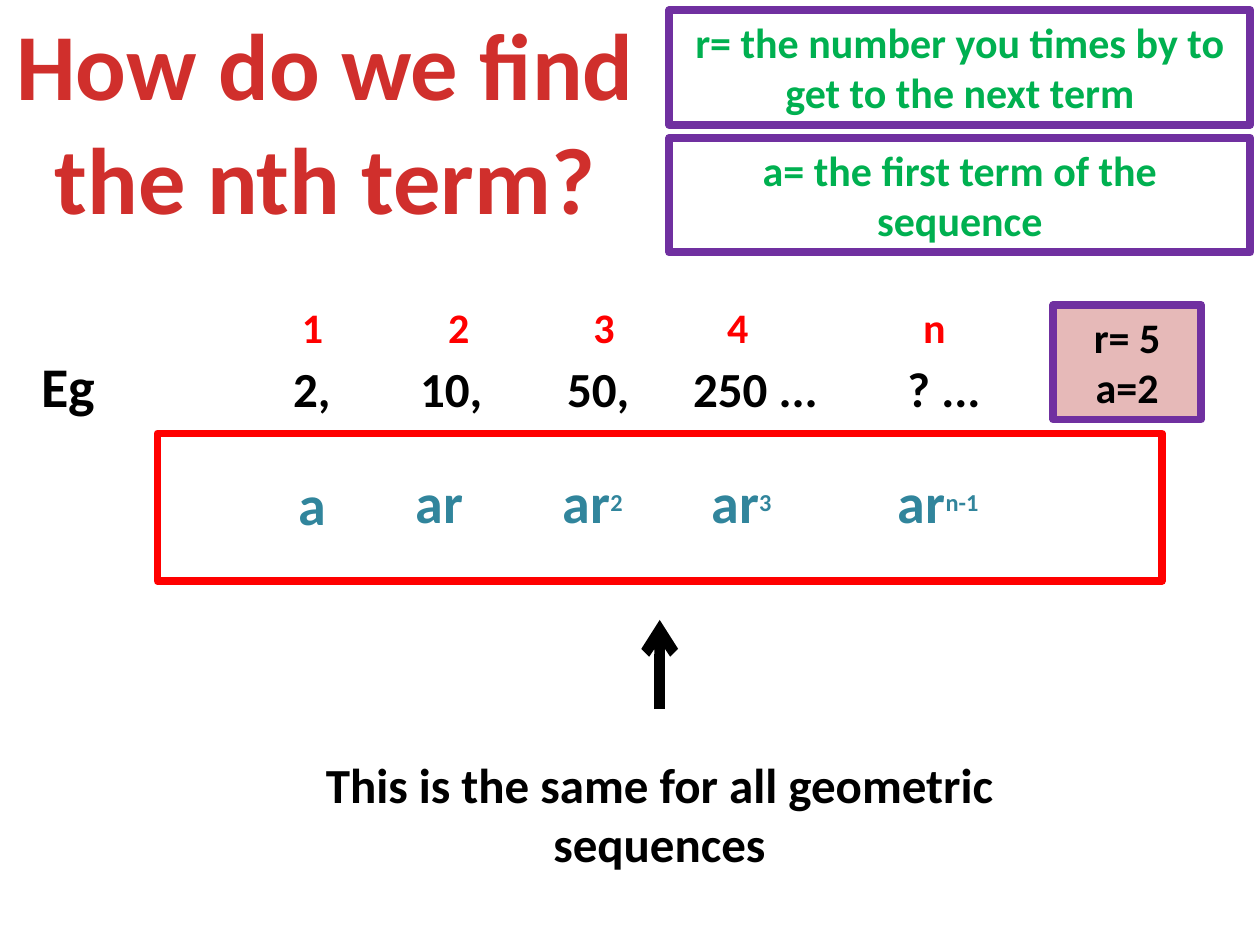
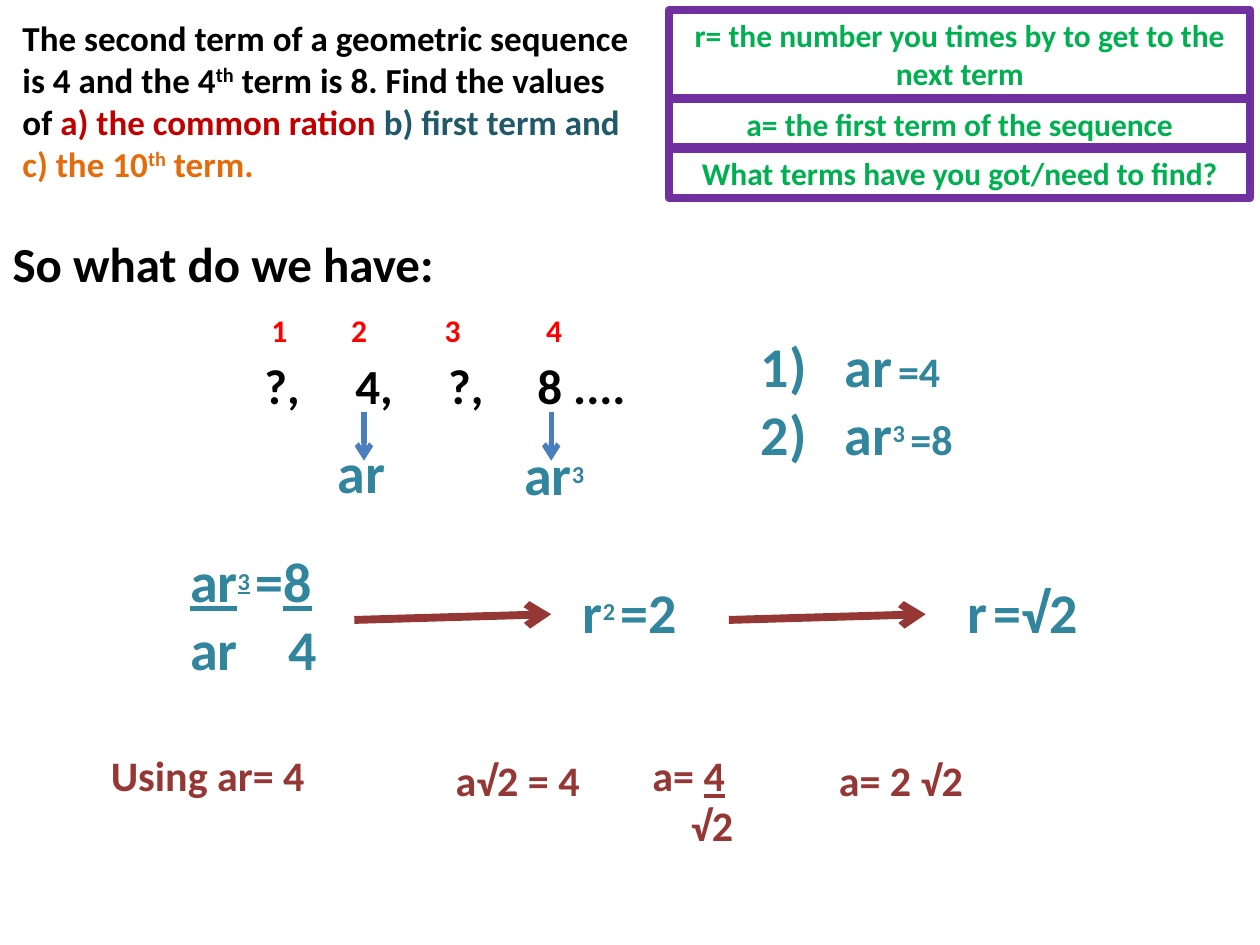
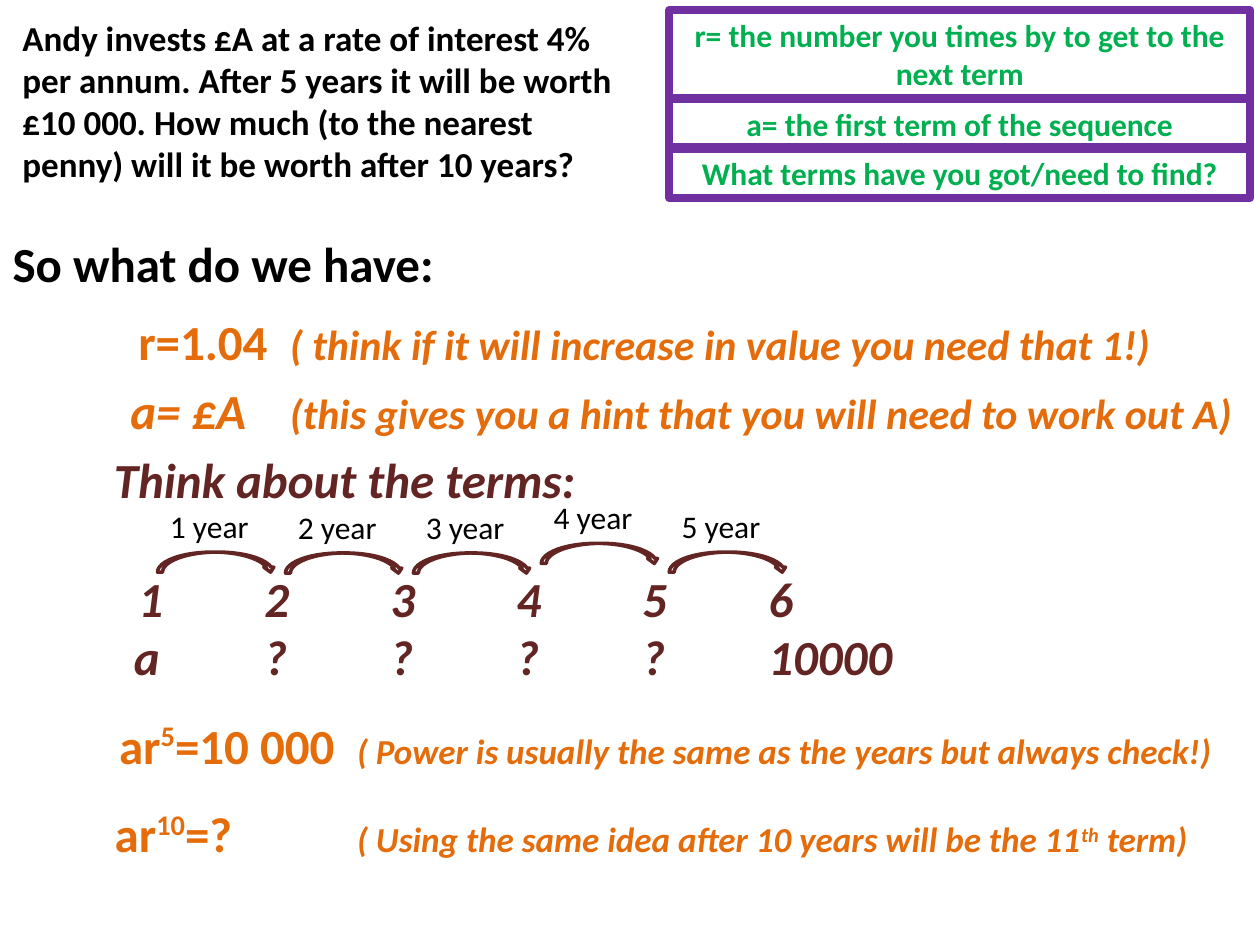
from collections import namedtuple

from lxml.etree import SubElement
from pptx import Presentation
from pptx.dml.color import RGBColor
from pptx.enum.shapes import MSO_CONNECTOR, MSO_SHAPE
from pptx.enum.text import MSO_ANCHOR, MSO_AUTO_SIZE, PP_ALIGN
from pptx.oxml.ns import qn
from pptx.util import Pt

Box = namedtuple("Box", "left top width height")

COLORS = {
    "black": "000000",
    "title": "D02F2C",
    "rule": "00B050",
    "frame": "7030A0",
    "pink": "E6B9B8",
    "red": "FF0000",
    "teal": "31859C",
    "dark_teal": "215968",
    "dark_red": "C00000",
    "orange": "E46C0A",
    "blue": "4B7EBC",
    "brown": "953735",
    "maroon": "632523",
}
FONT = "Calibri"
TITLE_ONLY = 5
LINE_WIDTH = 4.5

RATIO_RULE = "r= the number you times by to get to the next term"
FIRST_TERM_RULE = "a= the first term of the sequence"
TERMS_RULE = "What terms have you got/need to find?"


def rgb(color):
    return RGBColor.from_string(COLORS[color])


def style(font, size=None, color=None, bold=None, italic=None, underline=None):
    if size:
        font.size = Pt(size)
    if color:
        font.color.rgb = rgb(color)
    if bold is not None:
        font.bold = bold
    if italic is not None:
        font.italic = italic
    if underline is not None:
        font.underline = underline


def raised(text, percent=30, **look):
    return text, dict(look, raised=percent)


def write(paragraph, runs, tabs=(), before=0, indent=0, align=PP_ALIGN.LEFT, **look):
    paragraph.alignment = align
    paragraph.space_before = Pt(before)
    properties = paragraph._p.get_or_add_pPr()
    if indent:
        properties.set("marL", str(Pt(indent)))
    if tabs:
        stops = SubElement(properties, qn("a:tabLst"))
        for position in tabs:
            SubElement(stops, qn("a:tab"), pos=str(Pt(position)), algn="l")
    paragraph.font.name = FONT
    style(paragraph.font, **{"bold": True, **look})
    for item in [runs] if isinstance(runs, str) else runs:
        text, change = (item, {}) if isinstance(item, str) else item
        change = dict(change)
        percent = change.pop("raised", None)
        run = paragraph.add_run()
        run.text = text
        style(run.font, **change)
        if percent:
            run._r.get_or_add_rPr().set("baseline", str(percent * 1000))


def prepare(frame):
    frame.word_wrap = True
    frame.auto_size = MSO_AUTO_SIZE.NONE
    frame.vertical_anchor = MSO_ANCHOR.TOP
    return frame


def add_text(slide, box, runs, **look):
    frame = prepare(slide.shapes.add_textbox(*map(Pt, box)).text_frame)
    write(frame.paragraphs[0], runs, **look)
    return frame


def add_outline(slide, box, kind, color, width=LINE_WIDTH, fill=None):
    outline = slide.shapes.add_shape(kind, *map(Pt, box))
    outline.shadow.inherit = False
    outline.line.color.rgb = rgb(color)
    outline.line.width = Pt(width)
    if fill:
        outline.fill.solid()
        outline.fill.fore_color.rgb = rgb(fill)
    else:
        outline.fill.background()
    return outline


def add_framed(slide, box, lines, size, color, fill=None):
    panel = add_outline(slide, box, MSO_SHAPE.RECTANGLE, "frame", fill=fill)
    frame = prepare(panel.text_frame)
    for index, line in enumerate(lines):
        paragraph = frame.add_paragraph() if index else frame.paragraphs[0]
        write(paragraph, line, size=size, color=color, align=PP_ALIGN.CENTER)


def add_arrow(slide, start, end, color, width):
    arrow = slide.shapes.add_connector(MSO_CONNECTOR.STRAIGHT, *map(Pt, start + end))
    arrow.line.color.rgb = rgb(color)
    arrow.line.width = Pt(width)
    SubElement(arrow.line._get_or_add_ln(), qn("a:tailEnd"), type="arrow")
    SubElement(arrow._element.spPr, qn("a:effectLst"))


def add_slide(deck, title, box, **look):
    slide = deck.slides.add_slide(deck.slide_layouts[TITLE_ONLY])
    heading = slide.shapes.title
    heading.left, heading.top, heading.width, heading.height = map(Pt, box)
    write(prepare(heading.text_frame).paragraphs[0], title, **look)
    return slide


def add_rules(slide, box, rules, size):
    for text, top, height in rules:
        add_framed(slide, Box(box.left, box.top + top, box.width, height),
                   [text], size, "rule")


def add_question_slide(deck, question):
    slide = add_slide(deck, "So what do we have:", Box(0, 129.6, 720, 41),
                      size=28, color="black")
    add_rules(slide, Box(382.5, 5.75, 332, 108),
              [(RATIO_RULE, 0, 51), (FIRST_TERM_RULE, 50.5, 29), (TERMS_RULE, 78.5, 29)], 18)
    add_text(slide, Box(5.75, 5.75, 366, 104), question, size=20, color="black")
    return slide


def add_numbered_sequence(slide, box):
    frame = add_text(slide, box, "\t1\t2\t3\t4\tn", tabs=(149, 232.5, 315.5, 392, 504),
                     size=24, color="red")
    write(frame.add_paragraph(),
          [("Eg", {"size": 32}), "\t2,\t10,\t50,\t250 ...\t? ..."],
          tabs=(144, 216.5, 300.5, 372.5, 495), size=28, color="black")


def add_general_terms(slide, box):
    add_outline(slide, box, MSO_SHAPE.RECTANGLE, "red")
    terms = [("a", "", 73.5, 28), ("ar", "", 140.5, 45), ("ar", "2", 224.5, 68),
             ("ar", "3", 309.5, 68), ("ar", "n-1", 416, 68)]
    for base, power, left, width in terms:
        top = 16 if power or base == "ar" else 17
        runs = [base, raised(power, size=24)] if power else base
        add_text(slide, Box(box.left + left, box.top + top, width, 46), runs,
                 size=32, color="teal")
    middle = box.left + box.width / 2
    add_arrow(slide, (middle, box.top + 157.5), (middle, box.top + 106.5), "black", 6)


def add_known_terms(slide, box):
    frame = add_text(slide, box, "\t1\t2\t3\t4", tabs=(148, 193.5, 247, 305),
                     size=18, color="red")
    write(frame.add_paragraph(), "\t?,\t4,\t?,\t8 ....", tabs=(144, 196, 249, 300),
          before=4, size=28, color="black")
    terms = [(["ar"], 186, 72, 208), (["ar", raised("3", size=24)], 292.5, 73.5, 315)]
    for runs, left, top, arrow in terms:
        add_text(slide, Box(box.left + left, box.top + top, 68, 46), runs,
                 size=32, color="teal")
        add_arrow(slide, (box.left + arrow, box.top + 61), (box.left + arrow, box.top + 89),
                  "blue", 3)


def add_equations(slide, box):
    equations = [("1)\tar", " ", "=4"), ("2)\tar", "3 ", "=8")]
    for index, (base, power, value) in enumerate(equations):
        add_text(slide, Box(box.left, box.top + 39 * index, box.width, 46),
                 [base, raised(power, size=24), (value, {"size": 24})],
                 tabs=(48,), size=32, color="teal")


def add_division(slide, box):
    under = {"underline": True}
    frame = add_text(slide, Box(box.left, box.top, 107, 85),
                     [("ar", under), raised("3", size=24, **under), raised(" ", size=24),
                      "=", ("8", under)],
                     size=32, color="teal")
    write(frame.add_paragraph(), "ar\t4", tabs=(56,), size=32, color="teal")
    for left, power, value in [(224.5, "2 ", "=2"), (444.5, " ", "=√2")]:
        add_text(slide, Box(box.left + left, box.top + 17.25, 107, 46),
                 ["r", raised(power, size=24), value], size=32, color="teal")
    for left in (101, 315):
        add_arrow(slide, (box.left + left, box.top + 45.25),
                  (box.left + left + 112.5, box.top + 42), "brown", LINE_WIDTH)


def add_first_term_working(slide, box):
    look = {"size": 24, "color": "brown"}
    add_text(slide, Box(box.left, box.top, 190, 36), "Using ar= 4", **look)
    add_text(slide, Box(box.left + 197, box.top + 3, 112, 36), "a√2 = 4", **look)
    frame = add_text(slide, Box(box.left + 309.5, box.top, 100, 87),
                     ["a= ", ("4", {"underline": True})], **look)
    write(frame.add_paragraph(), "√2", indent=22, **look)
    add_text(slide, Box(box.left + 416, box.top + 3, 191, 36), "a= 2 √2", **look)


def add_investment_facts(slide, box):
    hint = {"size": 24, "italic": True}
    facts = [("\tr=1.04", "\t( think if it will increase in value you need that 1!)", 72, False),
             ("\ta= £A", "\t(this gives you a hint that you will need to work out A)", 67.5, True)]
    for index, (fact, note, start, italic) in enumerate(facts):
        add_text(slide, Box(box.left, box.top + 39.5 * index, box.width, 41),
                 [fact, (note, hint)], tabs=(start, 158.5),
                 size=28, color="orange", italic=italic)


def add_yearly_terms(slide, box):
    look = {"size": 28, "color": "maroon", "italic": True}
    stops = [72 * place for place in range(1, 7)]
    frame = add_text(slide, box, "Think about the terms:", indent=58, **look)
    write(frame.add_paragraph(), "\t1\t2\t3\t4\t5\t6", tabs=stops, before=34, **look)
    write(frame.add_paragraph(), "\ta\t?\t?\t?\t?\t10000", tabs=[69.5] + stops[1:], **look)
    for index, top in enumerate((62, 62.5, 62.5, 57, 62)):
        left = box.left + 90 + 73.1 * index
        add_outline(slide, Box(left, box.top + top, 67.5, 11.5),
                    MSO_SHAPE.CURVED_DOWN_ARROW, "maroon", 2)
        add_text(slide, Box(left, box.top + top - 29.5, 62, 29), f"{index + 1} year",
                 size=18, color="black", bold=False)


def add_power_equations(slide, box):
    note = {"size": 20, "italic": True}
    equations = [
        ("5", "=10 000", 61,
         [("\t( Power is usually the same as the years but always check!)", note)]),
        ("10", "=?", 58.5,
         [("\t( Using the same idea after 10 years will be the 11", note),
          raised("th", **note), (" term)", note)]),
    ]
    for index, (power, value, start, hint) in enumerate(equations):
        add_text(slide, Box(box.left, box.top + 50.5 * index, box.width, 41),
                 ["\tar", raised(power, 36), value, *hint], tabs=(start, 197),
                 size=28, color="orange")


def build_nth_term(deck):
    slide = add_slide(deck, "How do we find the nth term?", Box(0, 0, 371.5, 138),
                      size=54, color="title", align=PP_ALIGN.CENTER)
    add_rules(slide, Box(382.5, 5.75, 332, 139),
              [(RATIO_RULE, 0, 65.5), (FIRST_TERM_RULE, 73, 65.5)], 24)
    add_numbered_sequence(slide, Box(16.5, 168.5, 584, 90))
    add_framed(slide, Box(602, 174.25, 84.25, 65.5), ["r= 5", "a=2"], 24, "black", "pink")
    add_general_terms(slide, Box(90, 247.75, 574, 84.25))
    add_text(slide, Box(140.5, 427.75, 472.5, 75),
             "This is the same for all geometric sequences",
             size=28, color="black", align=PP_ALIGN.CENTER)


def build_two_terms(deck):
    orange = {"color": "orange"}
    slide = add_question_slide(deck, [
        "The second term of a geometric sequence is 4 and the 4", raised("th"),
        " term is 8. Find the values of ",
        ("a) the common ration ", {"color": "dark_red"}),
        ("b) first term and ", {"color": "dark_teal"}),
        ("c) the 10", orange), raised("th", **orange), (" term.", orange)])
    add_known_terms(slide, Box(0, 174.25, 420, 71))
    add_equations(slide, Box(427.75, 185.75, 168, 85))
    add_division(slide, Box(101.5, 309, 551, 85))
    add_first_term_working(slide, Box(56.25, 424.75, 607, 87))


def build_investment(deck):
    slide = add_question_slide(
        deck,
        "Andy invests £A at a rate of interest 4% per annum. After 5 years it will be worth "
        "£10 000. How much (to the nearest penny) will it be worth after 10 years?")
    add_investment_facts(slide, Box(0, 174.25, 720, 81))
    add_yearly_terms(slide, Box(0, 253.5, 720, 143))
    add_power_equations(slide, Box(0, 405.25, 720, 92))


def main():
    deck = Presentation()
    deck.slide_width, deck.slide_height = Pt(720), Pt(540)
    build_nth_term(deck)
    build_two_terms(deck)
    build_investment(deck)
    deck.save("out.pptx")


if __name__ == "__main__":
    main()
